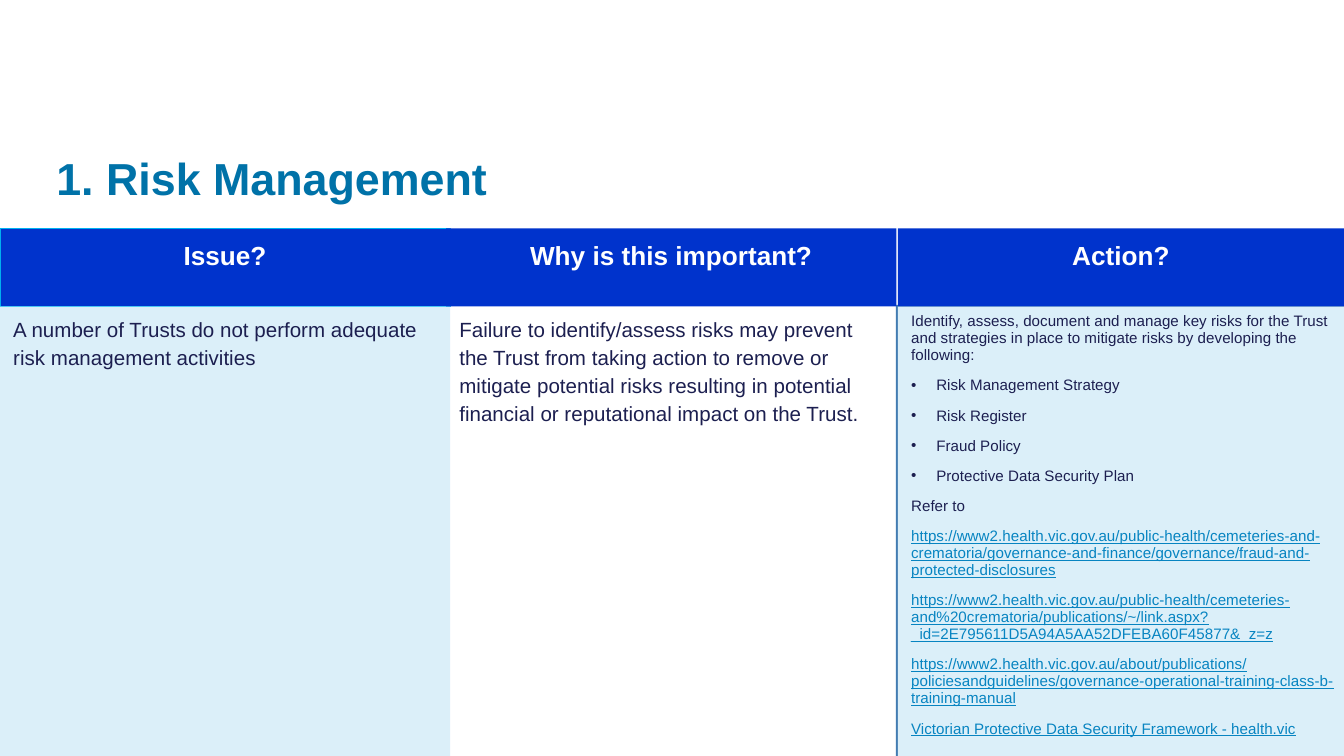
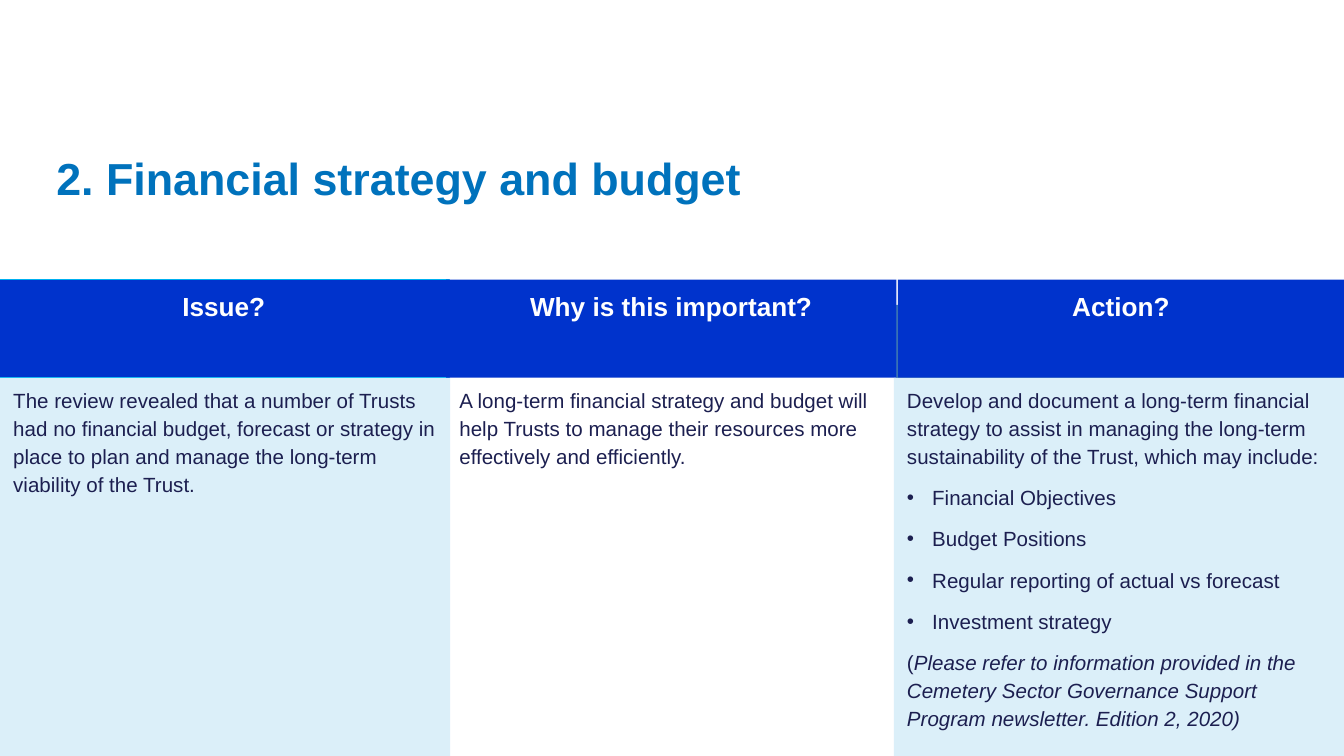
"""Build two slides that set out an issue, its importance and the action."""
from dataclasses import dataclass

from lxml import etree
from pptx import Presentation
from pptx.dml.color import RGBColor
from pptx.enum.shapes import MSO_SHAPE
from pptx.enum.text import MSO_ANCHOR, MSO_AUTO_SIZE, PP_ALIGN
from pptx.oxml.ns import qn
from pptx.util import Pt

RECT = MSO_SHAPE.RECTANGLE
TOP, MIDDLE = MSO_ANCHOR.TOP, MSO_ANCHOR.MIDDLE
LEFT, CENTER = PP_ALIGN.LEFT, PP_ALIGN.CENTER
NO_FIT = MSO_AUTO_SIZE.NONE

BLUE = RGBColor(0x00, 0x33, 0xCC)
STEEL = RGBColor(0x42, 0x7C, 0xB2)
CYAN = RGBColor(0x00, 0xB0, 0xF0)
PALE = RGBColor(0xDB, 0xEF, 0xF9)
WHITE = RGBColor(0xFF, 0xFF, 0xFF)
NAVY = RGBColor(0x1C, 0x1F, 0x50)
LINK = RGBColor(0x07, 0x84, 0xC1)
TEAL = RGBColor(0x00, 0x72, 0xA8)
AZURE = RGBColor(0x00, 0x72, 0xBC)

FONT = "Arial"
SLIDE_W, SLIDE_H = 720, 405
COL_W, LAST_W = 241.2, 239
BAND_TOP, BAND_W = 163.4, 240
INDENT = 13.5
HEADINGS = ("Issue?", "Why is this important?", "Action?")
HEAD_X = (0, 239, 481)


@dataclass(frozen=True)
class Para:
    """A paragraph: upright text, then an italic tail."""
    text: str
    italic: str = ""
    bullet: bool = False
    link: bool = False


@dataclass(frozen=True)
class Column:
    """The body text below one heading."""
    paras: tuple[Para, ...]
    x: float
    size: float = 11
    spacing: float = 1.14


@dataclass(frozen=True)
class Topic:
    """One slide: its title, header band and columns."""
    title: str
    color: RGBColor
    head_top: float
    head_h: float
    head_x: float
    columns: tuple[Column, ...]


def bullets(*items: str) -> tuple[Para, ...]:
    """Return one bulleted paragraph for each item."""
    return tuple(Para(item, bullet=True) for item in items)


def links(*items: str) -> tuple[Para, ...]:
    """Return one underlined paragraph for each item."""
    return tuple(Para(item, link=True) for item in items)


TOPICS = (
    Topic("1. Risk Management", TEAL, 122.4, 41.8, 0, (
        Column((Para("A number of Trusts do not perform adequate risk "
                     "management activities"),), 0),
        Column((Para("Failure to identify/assess risks may prevent the Trust "
                     "from taking action to remove or mitigate potential risks "
                     "resulting in potential financial or reputational impact "
                     "on the Trust."),), 239),
        Column((
            Para("Identify, assess, document and manage key risks for the "
                 "Trust and strategies in place to mitigate risks by "
                 "developing the following:"),
            *bullets("Risk Management Strategy", "Risk Register",
                     "Fraud Policy", "Protective Data Security Plan"),
            Para("Refer to"),
            *links(
                "https://www2.health.vic.gov.au/public-health/cemeteries-and-"
                "crematoria/governance-and-finance/governance/fraud-and-"
                "protected-disclosures",
                "https://www2.health.vic.gov.au/public-health/cemeteries-"
                "and%20crematoria/publications/~/link.aspx?"
                "_id=2E795611D5A94A5AA52DFEBA60F45877&_z=z",
                "https://www2.health.vic.gov.au/about/publications/"
                "policiesandguidelines/governance-operational-training-"
                "class-b-training-manual",
                "Victorian Protective Data Security Framework - health.vic"),
        ), 481, 8.1, 0.94),
    )),
    Topic("2. Financial strategy and budget", AZURE, 149.8, 52.6, -0.7, (
        Column((Para("The review revealed that a number of Trusts had no "
                     "financial budget, forecast or strategy in place to plan "
                     "and manage the long-term viability of the Trust."),), 0),
        Column((Para("A long-term financial strategy and budget will help "
                     "Trusts to manage their resources more effectively and "
                     "efficiently."),), 239),
        Column((
            Para("Develop and document a long-term financial strategy to "
                 "assist in managing the long-term sustainability of the "
                 "Trust, which may include:"),
            *bullets("Financial Objectives", "Budget Positions",
                     "Regular reporting of actual vs forecast",
                     "Investment strategy"),
            Para("(", italic="Please refer to information provided in the "
                 "Cemetery Sector Governance Support Program newsletter. "
                 "Edition 2, 2020)"),
        ), 478.8),
    )),
)


def add_bullet(p) -> None:
    """Give a paragraph a hanging bullet."""
    pPr = p._p.get_or_add_pPr()
    pPr.set("marL", str(Pt(INDENT)))
    pPr.set("indent", str(-Pt(INDENT)))
    etree.SubElement(pPr, qn("a:buFont")).set("typeface", FONT)
    etree.SubElement(pPr, qn("a:buChar")).set("char", "•")


def write_text(sp, paras: tuple[Para, ...], *, size: float, color: RGBColor,
               spacing: float = 1.14, before: float = 6, after: float = 1,
               bold: bool = False, align=LEFT, anchor=TOP) -> None:
    """Fill a shape with formatted paragraphs."""
    tf = sp.text_frame
    tf.word_wrap = True
    tf.auto_size = NO_FIT
    tf.vertical_anchor = anchor
    tf.margin_left = tf.margin_right = Pt(7.2)
    tf.margin_top = tf.margin_bottom = Pt(3.6)
    for i, para in enumerate(paras):
        p = tf.add_paragraph() if i else tf.paragraphs[0]
        if para.bullet:
            add_bullet(p)
        p.alignment = align
        p.line_spacing = spacing
        p.space_before = Pt(before if i else 0)
        p.space_after = Pt(after)
        for text, italic in ((para.text, False), (para.italic, True)):
            if not text:
                continue
            r = p.add_run()
            r.text = text
            r.font.name, r.font.size = FONT, Pt(size)
            r.font.bold, r.font.italic = bold, italic
            r.font.underline = para.link
            r.font.color.rgb = LINK if para.link else color


def add_box(s, x: float, y: float, w: float, h: float,
            fill: RGBColor | None, line: RGBColor | None = None):
    """Add a rectangle, or a text box if it has no fill."""
    box = tuple(Pt(v) for v in (x, y, w, h))
    if fill is None:
        return s.shapes.add_textbox(*box)
    sp = s.shapes.add_shape(RECT, *box)
    sp.shadow.inherit = False
    sp.fill.solid()
    sp.fill.fore_color.rgb = fill
    if line is None:
        sp.line.fill.background()
    else:
        sp.line.color.rgb = line
        sp.line.width = Pt(0.75)
    return sp


def add_title(s, text: str, color: RGBColor) -> None:
    """Place and format the title placeholder."""
    sp = s.shapes.title
    sp.left, sp.top, sp.width, sp.height = Pt(23), Pt(73.4), Pt(674), Pt(37.4)
    write_text(sp, (Para(text),), size=24, color=color, spacing=1.2,
               after=2, bold=True, anchor=MIDDLE)


def add_topic(prs, topic: Topic) -> None:
    """Add the slide for one topic."""
    s = prs.slides.add_slide(prs.slide_layouts[5])
    for x, fill in ((0, BLUE), (SLIDE_W - BAND_W, STEEL)):
        add_box(s, x, BAND_TOP, BAND_W, SLIDE_H - BAND_TOP, fill)
    add_title(s, topic.title, topic.color)
    body_top = topic.head_top + topic.head_h
    head_xs = (topic.head_x, *HEAD_X[1:])
    widths = (COL_W, COL_W, LAST_W)
    lines = (CYAN, None, None)
    fills = (PALE, None, PALE)
    for heading, x, w, line, fill, col in zip(
            HEADINGS, head_xs, widths, lines, fills, topic.columns):
        sp = add_box(s, x, topic.head_top, w, topic.head_h, BLUE, line)
        write_text(sp, (Para(heading),), size=14, color=WHITE, bold=True,
                   align=CENTER)
        sp = add_box(s, col.x, body_top, COL_W, SLIDE_H - body_top, fill)
        write_text(sp, col.paras, size=col.size, color=NAVY,
                   spacing=col.spacing)


def main() -> None:
    """Build and save the presentation."""
    prs = Presentation()
    prs.slide_width, prs.slide_height = Pt(SLIDE_W), Pt(SLIDE_H)
    for topic in TOPICS:
        add_topic(prs, topic)
    prs.save("out.pptx")


if __name__ == "__main__":
    main()
